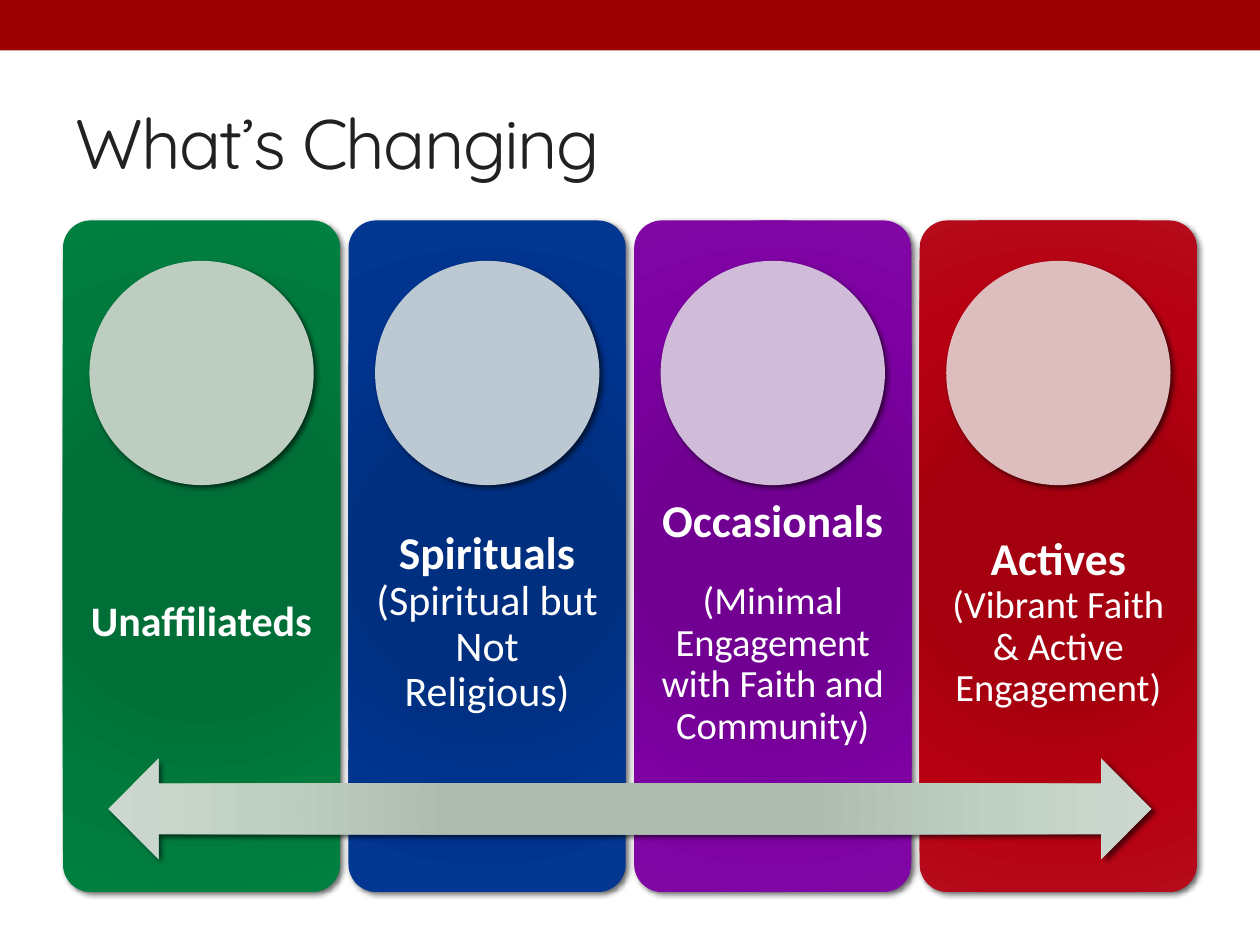
"""Build the "What's Changing" slide: four engagement columns above a two-way arrow."""
from dataclasses import dataclass

from lxml import etree
from pptx import Presentation
from pptx import util as u
from pptx.dml.color import RGBColor
from pptx.enum import shapes, text
from pptx.oxml.ns import nsdecls, qn


@dataclass(frozen=True)
class Theme:
    """Colours, fonts and type sizes of the slide."""
    banner: str = "9B0101"
    title: str = "212121"
    white: str = "FFFFFF"
    title_font: str = "Quicksand"
    body_font: str = "Calibri"
    title_size: int = 40
    large: int = 26
    medium: int = 24
    small: int = 22
    arrow: tuple = ("ACBBB0", "ADBBB0", "C1D0C4", "CCD8CF")
    green: tuple = ("006E37", "006E37", "007A3D", "008040")
    blue: tuple = ("002F80", "002F80", "00348F", "033792")
    purple: tuple = ("710092", "710092", "7E00A3", "8007A4")
    red: tuple = ("A4000F", "A4000F", "B70011", "B50B1B")
    circles: tuple = ("BDCDC0", "BCC9D3", "D0BCD9", "DEBDBF")


THEME = Theme()
STOPS = (0, 34, 70, 100)
COLUMN_LEFT, COLUMN_WIDTH, COLUMN_PITCH = 0.5, 2.2, 6.8 / 3
CIRCLE_SIZE = 1.78
COLUMNS = (
    (THEME.green, [("Unaffiliateds", THEME.medium, True)]),
    (THEME.blue, [("Spirituals\n", THEME.large, True),
                  ("(Spiritual but Not Religious)", THEME.medium, False)]),
    (THEME.purple, [("Occasionals", THEME.large, True),
                    (" \n", THEME.small, True),
                    ("(Minimal Engagement with Faith and Community)", THEME.small, False)]),
    (THEME.red, [("Actives\n", THEME.large, True),
                 ("(Vibrant Faith\n& Active Engagement)", THEME.small, False)]),
)


def apply_format(target, values):
    """Set every attribute named in values on target."""
    for name, value in values.items():
        setattr(target, name, value)


def box(left, top, width, height):
    """Return a position and size in inches as lengths."""
    return [u.Inches(value) for value in (left, top, width, height)]


def format_font(run, name, size, color, bold=False):
    """Give a run its font, size, weight and colour."""
    apply_format(run.font, {"name": name, "size": u.Pt(size), "bold": bold})
    run.font.color.rgb = RGBColor.from_string(color)


def fill_gradient(shape, colors):
    """Fill a shape with a circular gradient."""
    stops = "".join(
        f'<a:gs pos="{stop * 1000}"><a:srgbClr val="{color}"/></a:gs>'
        for stop, color in zip(STOPS, colors))
    gradient = etree.fromstring(
        f'<a:gradFill {nsdecls("a")} rotWithShape="1"><a:gsLst>{stops}</a:gsLst>'
        '<a:path path="circle"><a:fillToRect l="100000" t="100000" r="100000" b="100000"/>'
        '</a:path></a:gradFill>')
    shape.element.spPr.find(qn("a:prstGeom")).addnext(gradient)


def add_shadow(shape):
    """Add a soft shadow to the lower right of a shape."""
    effects = shape.element.spPr.find(qn("a:effectLst"))
    effects.append(etree.fromstring(
        f'<a:outerShdw {nsdecls("a")} blurRad="{u.Pt(3)}" dist="{u.Pt(2)}" dir="2700000" '
        'algn="tl" rotWithShape="0"><a:srgbClr val="000000"><a:alpha val="60000"/>'
        '</a:srgbClr></a:outerShdw>'))


def add_figure(slide, kind, position, fill, shadow=True):
    """Add an outline-free preset shape with a solid or gradient fill."""
    shape = slide.shapes.add_shape(kind, *box(*position))
    shape.shadow.inherit = False
    shape.line.fill.background()
    if isinstance(fill, tuple):
        fill_gradient(shape, fill)
    else:
        shape.fill.solid()
        shape.fill.fore_color.rgb = RGBColor.from_string(fill)
    if shadow:
        add_shadow(shape)
    return shape


def add_title(slide, wording):
    """Place and format the title placeholder."""
    title = slide.shapes.title
    left, top, width, height = box(0.5, 0.58, 9, 1.08)
    apply_format(title, {"left": left, "top": top, "width": width, "height": height})
    title.text_frame.vertical_anchor = text.MSO_ANCHOR.MIDDLE
    paragraph = title.text_frame.paragraphs[0]
    paragraph.alignment = text.PP_ALIGN.LEFT
    run = paragraph.add_run()
    run.text = wording
    format_font(run, THEME.title_font, THEME.title_size, THEME.title)
    run.font._element.set("spc", "-100")


def add_label(slide, position, pieces):
    """Add a centred white label made of differently sized pieces."""
    frame = slide.shapes.add_textbox(*box(*position)).text_frame
    inset = u.Inches(0.2)
    apply_format(frame, {
        "word_wrap": True, "vertical_anchor": text.MSO_ANCHOR.MIDDLE,
        "margin_left": inset, "margin_right": inset,
        "margin_top": inset, "margin_bottom": inset})
    paragraph = frame.paragraphs[0]
    apply_format(paragraph, {"alignment": text.PP_ALIGN.CENTER, "line_spacing": 0.9})
    for wording, size, bold in pieces:
        for index, line in enumerate(wording.split("\n")):
            if index:
                paragraph.add_line_break()
            if line:
                run = paragraph.add_run()
                run.text = line
                format_font(run, THEME.body_font, size, THEME.white, bold)


def add_column(slide, left, gradient, circle_color, pieces):
    """Add one rounded column with its label and circle."""
    panel = add_figure(slide, shapes.MSO_SHAPE.ROUNDED_RECTANGLE,
                       (left, 1.75, COLUMN_WIDTH, 5.33), gradient)
    panel.adjustments[0] = 0.1
    add_label(slide, (left, 3.88, COLUMN_WIDTH, 2.13), pieces)
    circle_left = left + (COLUMN_WIDTH - CIRCLE_SIZE) / 2
    add_figure(slide, shapes.MSO_SHAPE.OVAL,
               (circle_left, 2.07, CIRCLE_SIZE, CIRCLE_SIZE), circle_color)


def main():
    """Build and save the presentation."""
    presentation = Presentation()
    apply_format(presentation, {"slide_width": u.Inches(10), "slide_height": u.Inches(7.5)})
    slide = presentation.slides.add_slide(presentation.slide_layouts[5])
    add_figure(slide, shapes.MSO_SHAPE.RECTANGLE, (0, 0, 10, 0.4), THEME.banner, shadow=False)
    add_title(slide, "What’s Changing")
    for index, (gradient, pieces) in enumerate(COLUMNS):
        add_column(slide, COLUMN_LEFT + index * COLUMN_PITCH, gradient,
                   THEME.circles[index], pieces)
    add_figure(slide, shapes.MSO_SHAPE.LEFT_RIGHT_ARROW, (0.86, 6.02, 8.28, 0.8), THEME.arrow)
    presentation.save("out.pptx")


if __name__ == "__main__":
    main()
